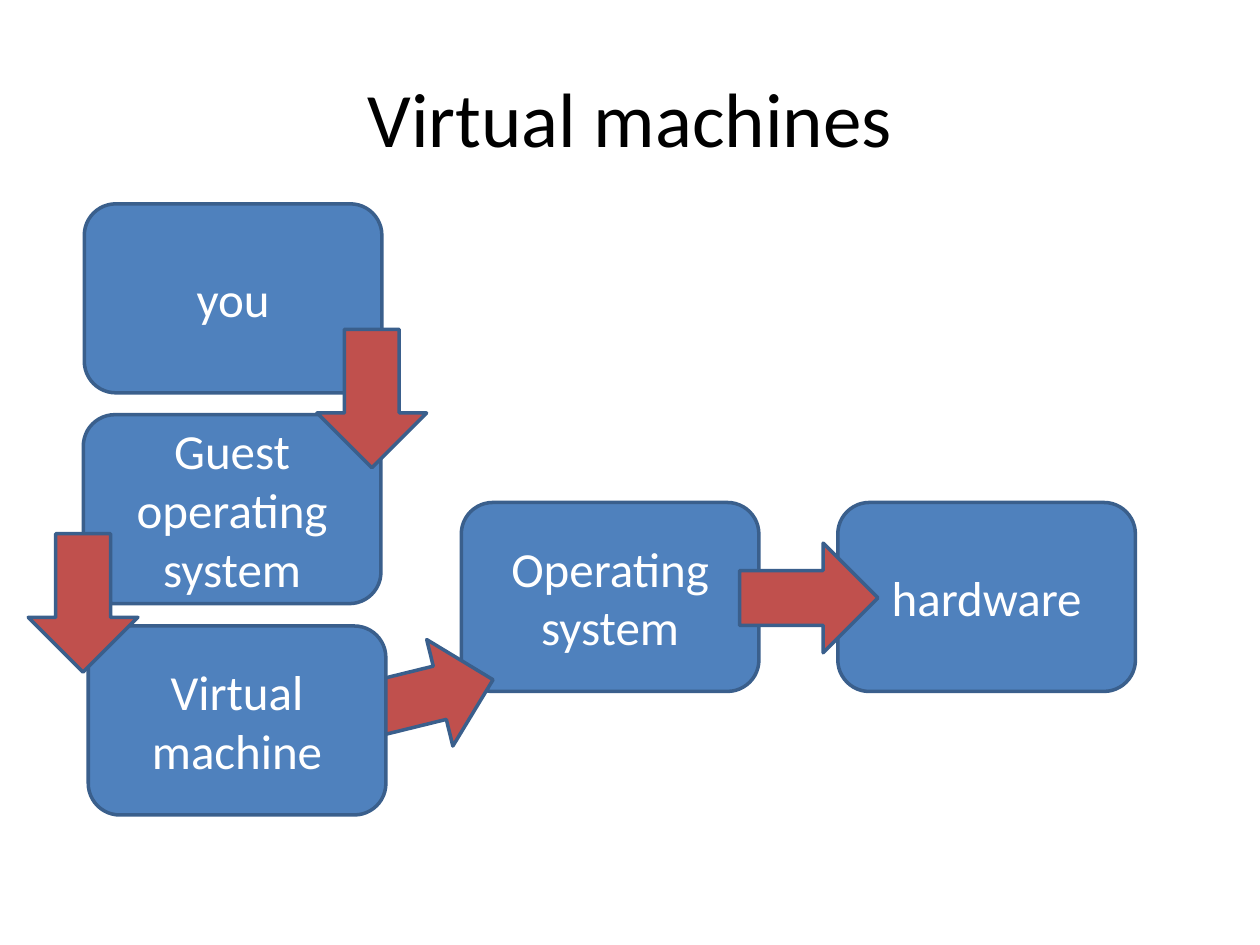
from dataclasses import dataclass

from pptx import Presentation
from pptx.dml.color import RGBColor
from pptx.enum.shapes import MSO_SHAPE
from pptx.enum.text import MSO_ANCHOR, PP_ALIGN
from pptx.shapes.autoshape import Shape
from pptx.slide import Slide
from pptx.text.text import TextFrame
from pptx.util import Cm, Pt

COLOURS = {
    "layer": "4F81BD",
    "flow": "C0504D",
    "outline": "3A5F8C",
    "title": "000000",
    "label": "FFFFFF",
}
TITLE_FONT = {"name": "Calibri", "size": Pt(44)}
LABEL_FONT = {"name": "Calibri", "size": Pt(28)}
LAYER_SIZE = (6.0, 3.81)
FLOW_SIZE = (2.79, 2.21)
MIDDLE_ROW = 10.13


@dataclass
class Layer:
    label: str
    left: float
    top: float


@dataclass
class Flow:
    left: float
    top: float
    rotation: float = 0


STACK = [
    Layer("you", 1.7, 4.11),
    Layer("hardware", 16.89, MIDDLE_ROW),
    Layer("Operating system", 9.3, MIDDLE_ROW),
    Flow(7.19, 12.93, 346.2),
    Flow(14.91, 10.95),
    Layer("Guest operating system", 1.68, 8.36),
    Layer("Virtual machine", 1.78, 12.62),
    Flow(6.1, 6.93, 90),
    Flow(0.28, 11.05, 90),
]


def write(frame: TextFrame, wording: str, font: dict, colour: str) -> None:
    frame.text = wording
    frame.word_wrap = True
    frame.vertical_anchor = MSO_ANCHOR.MIDDLE
    paragraph = frame.paragraphs[0]
    paragraph.alignment = PP_ALIGN.CENTER
    lettering = paragraph.runs[0].font
    for attribute, value in font.items():
        setattr(lettering, attribute, value)
    lettering.color.rgb = RGBColor.from_string(COLOURS[colour])


def add_block(slide: Slide, preset: MSO_SHAPE, part: Layer | Flow,
              size: tuple[float, float], colour: str) -> Shape:
    block = slide.shapes.add_shape(
        preset, Cm(part.left), Cm(part.top), *map(Cm, size))
    block.shadow.inherit = False
    block.fill.solid()
    block.fill.fore_color.rgb = RGBColor.from_string(COLOURS[colour])
    block.line.color.rgb = RGBColor.from_string(COLOURS["outline"])
    block.line.width = Pt(2)
    return block


def add_layer(slide: Slide, layer: Layer) -> None:
    block = add_block(slide, MSO_SHAPE.ROUNDED_RECTANGLE, layer, LAYER_SIZE, "layer")
    write(block.text_frame, layer.label, LABEL_FONT, "label")


def add_flow(slide: Slide, flow: Flow) -> None:
    arrow = add_block(slide, MSO_SHAPE.RIGHT_ARROW, flow, FLOW_SIZE, "flow")
    arrow.rotation = flow.rotation


def main() -> None:
    deck = Presentation()
    deck.slide_width, deck.slide_height = Cm(25.4), Cm(19.05)
    slide = deck.slides.add_slide(deck.slide_layouts[5])

    heading = slide.shapes.title
    placement = {"left": 1.27, "top": 0.76, "width": 22.86, "height": 3.18}
    for attribute, value in placement.items():
        setattr(heading, attribute, Cm(value))
    write(heading.text_frame, "Virtual machines", TITLE_FONT, "title")

    for part in STACK:
        if isinstance(part, Layer):
            add_layer(slide, part)
        else:
            add_flow(slide, part)

    deck.save("out.pptx")


if __name__ == "__main__":
    main()
